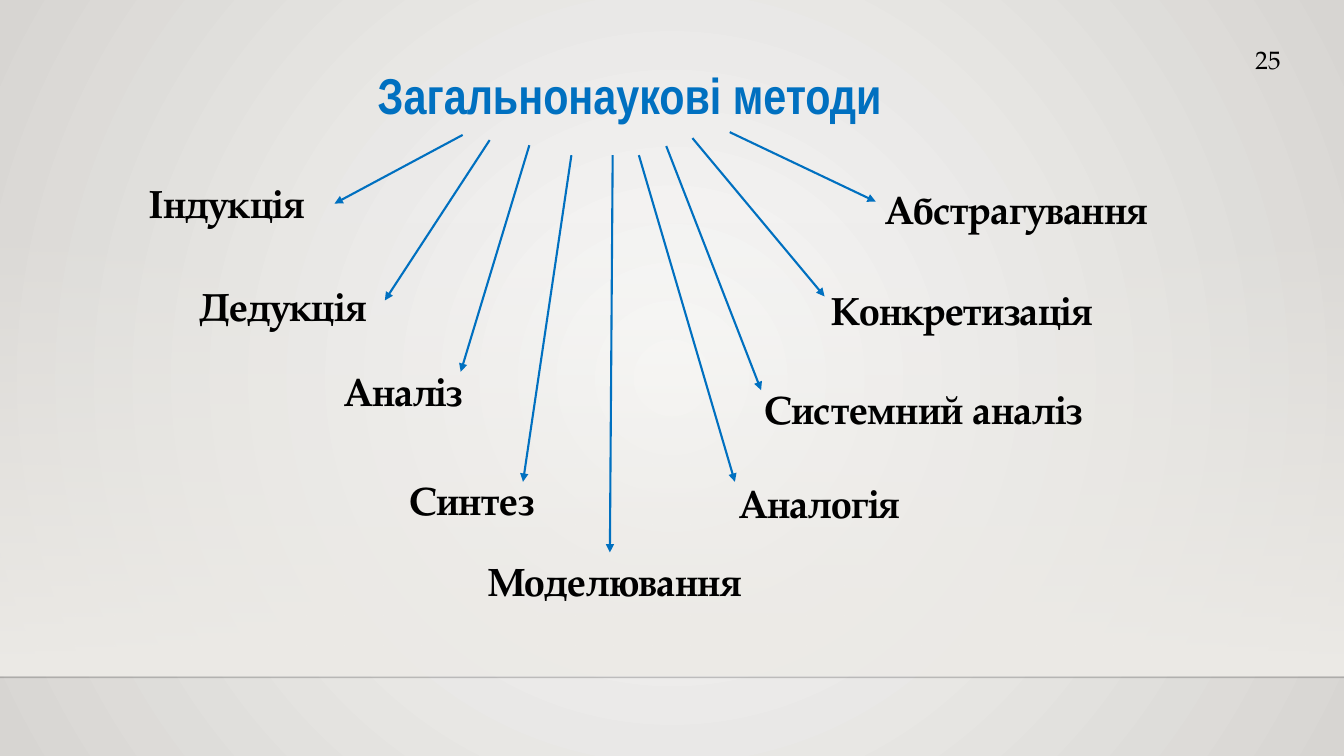
from lxml import etree
from pptx import Presentation
from pptx.dml.color import RGBColor
from pptx.enum.shapes import MSO_CONNECTOR, MSO_SHAPE
from pptx.enum.text import MSO_AUTO_SIZE
from pptx.oxml.ns import qn
from pptx.util import Cm, Pt

STRAIGHT = MSO_CONNECTOR.STRAIGHT
RECTANGLE = MSO_SHAPE.RECTANGLE
FIT_SHAPE = MSO_AUTO_SIZE.SHAPE_TO_FIT_TEXT

WIDTH, HEIGHT = 33.87, 19.05
FLOOR_Y = 17.07
COLORS = {
    "center": "FAFAF9",
    "edge": "D7D5D2",
    "band": "EDEBE7",
    "floor": "000001",
    "accent": "0070C0",
    "text": "000000",
}
TITLE_FONT = "Arial Narrow"
BODY_FONT = "TeX Gyre Pagella"

# name, (left, top, width) of the label, start and end of its arrow, in cm
METHODS = [
    ("Індукція", (3.53, 4.39, 4.9), (11.66, 3.4), (8.43, 5.13)),
    ("Дедукція", (4.78, 6.99, 5.18), (12.34, 3.53), (9.7, 7.57)),
    ("Аналіз", (8.43, 9.12, 3.84), (13.34, 3.66), (11.61, 9.37)),
    ("Синтез", (10.08, 11.89, 4.06), (14.4, 3.91), (13.18, 12.14)),
    ("Моделювання", (12.07, 13.92, 7.67), (15.44, 3.91), (15.37, 13.92)),
    ("Аналогія", (18.39, 11.96, 5.28), (16.1, 3.91), (18.52, 12.14)),
    ("Системний аналіз", (19.02, 9.58, 9.53), (16.79, 3.68), (19.18, 9.83)),
    ("Конкретизація", (20.7, 7.09, 8.33), (17.45, 3.48), (20.78, 7.47)),
    ("Абстрагування", (22.07, 4.55, 8.33), (18.39, 3.33), (22.07, 5.08)),
]


def rgb(name):
    return RGBColor.from_string(COLORS[name])


def set_gradient(fill, first, last):
    fill.gradient()
    for stop, name in zip(fill.gradient_stops, (first, last)):
        stop.color.rgb = rgb(name)


def set_alpha(color_element, percent):
    etree.SubElement(color_element, qn("a:alpha"), val=str(percent * 1000))


def paint_background(slide):
    """Fill the slide with a round gradient that is lightest in the middle."""
    set_gradient(slide.background.fill, "center", "edge")
    gradient = slide.element.find(".//" + qn("a:gradFill"))
    gradient.remove(gradient.find(qn("a:lin")))
    circle = etree.SubElement(gradient, qn("a:path"), {"path": "circle"})
    etree.SubElement(circle, qn("a:fillToRect"),
                     {side: "50000" for side in "ltrb"})


def add_band(slide):
    """Add the haze that thickens downwards to the floor line."""
    band = slide.shapes.add_shape(
        RECTANGLE, 0, Cm(5.59), Cm(WIDTH), Cm(11.43))
    band.shadow.inherit = False
    band.line.fill.background()
    set_gradient(band.fill, "band", "band")
    band.fill.gradient_angle = 270
    set_alpha(band.element.find(".//" + qn("a:srgbClr")), 0)


def add_line(slide, start, end, color, width):
    line = slide.shapes.add_connector(
        STRAIGHT, *(Cm(value) for value in (*start, *end)))
    line.line.color.rgb = rgb(color)
    line.line.width = Pt(width)
    etree.SubElement(line.element.spPr, qn("a:effectLst"))
    return line


def add_floor(slide):
    floor = add_line(slide, (0, FLOOR_Y), (WIDTH, FLOOR_Y), "floor", 1)
    set_alpha(floor.element.find(".//" + qn("a:srgbClr")), 20)


def add_arrow(slide, start, end):
    arrow = add_line(slide, start, end, "accent", 1.5)
    etree.SubElement(arrow.element.spPr.find(qn("a:ln")),
                     qn("a:tailEnd"), type="triangle")


def add_label(slide, text, box, size, font=BODY_FONT, color="text",
              bold=True, wrap=False):
    label = slide.shapes.add_textbox(*(Cm(value) for value in box))
    frame = label.text_frame
    frame.word_wrap = wrap
    frame.auto_size = FIT_SHAPE
    paragraph = frame.paragraphs[0]
    paragraph.text = text
    paragraph.font.name = font
    paragraph.font.size = Pt(size)
    paragraph.font.bold = bold
    paragraph.font.color.rgb = rgb(color)


def main():
    deck = Presentation()
    deck.slide_width, deck.slide_height = Cm(WIDTH), Cm(HEIGHT)
    slide = deck.slides.add_slide(deck.slide_layouts[6])

    paint_background(slide)
    add_band(slide)
    add_floor(slide)
    add_label(slide, "Загальнонаукові методи", (9.27, 1.5, 13.69, 1.8), 36,
              font=TITLE_FONT, color="accent")
    for name, place, start, end in METHODS:
        add_label(slide, name, (*place, 1.45), 28)
        add_arrow(slide, start, end)
    add_label(slide, "25", (31.39, 0.99, 1.37, 1.02), 18,
              bold=False, wrap=True)

    deck.save("out.pptx")


if __name__ == "__main__":
    main()
